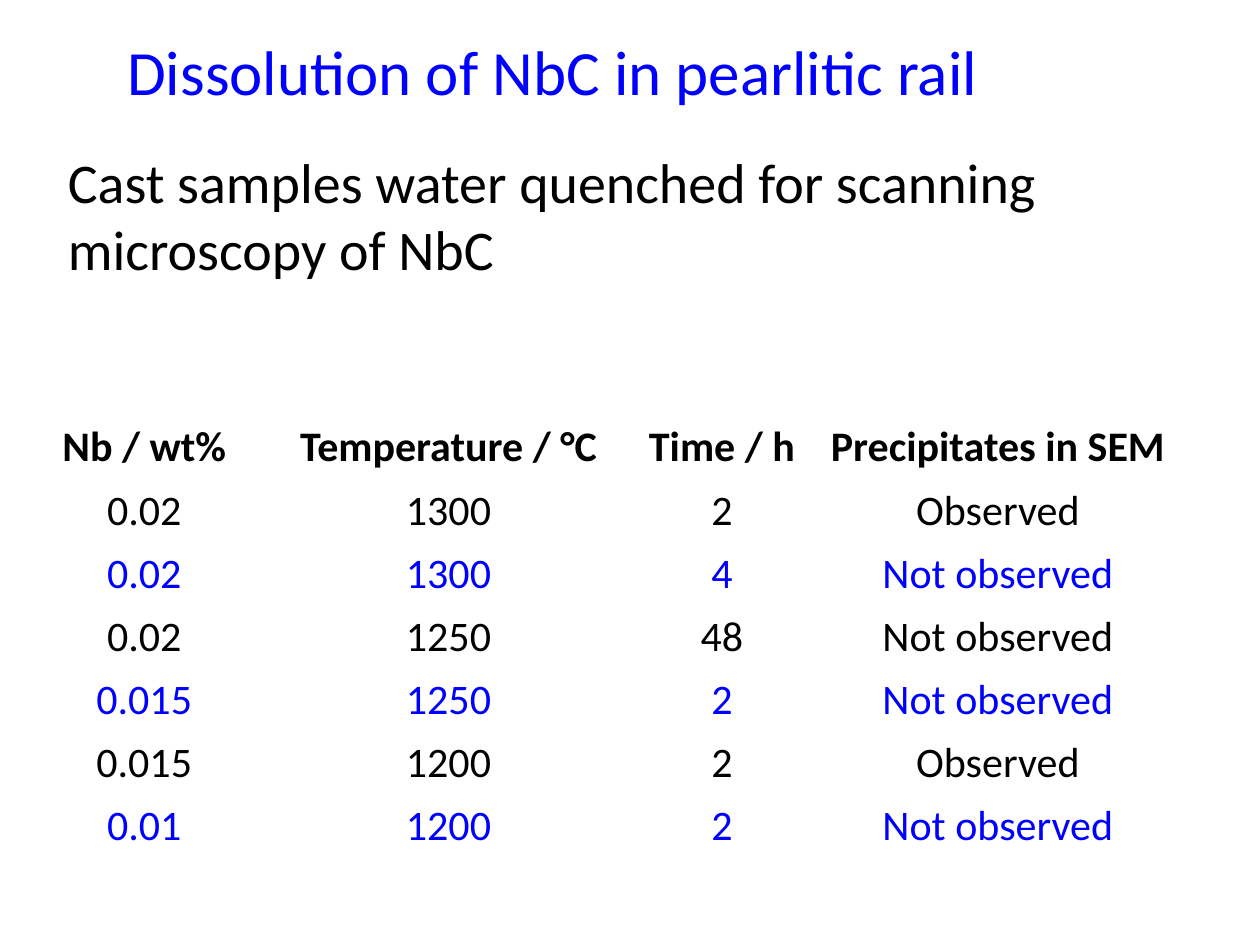
from lxml.etree import SubElement
from pptx import Presentation
from pptx.dml.color import RGBColor
from pptx.enum.shapes import MSO_SHAPE
from pptx.enum.text import MSO_ANCHOR, MSO_AUTO_SIZE, PP_ALIGN
from pptx.oxml.ns import qn
from pptx.util import Inches, Pt

COLORS = {"white": "FFFFFF", "black": "000000", "blue": "0000FF"}


def write(tf, text, size, color, align=PP_ALIGN.LEFT, bold=False):
    p = tf.paragraphs[0]
    p.alignment = align
    r = p.add_run()
    r.text = text
    font_format = {"name": "Calibri", "size": Pt(size), "bold": bold}
    for name, value in font_format.items():
        setattr(r.font, name, value)
    r.font.color.rgb = RGBColor.from_string(COLORS[color])


def add_border(cell, side, points):
    """Draw one white cell border; side is L, R, T or B."""
    ln = SubElement(cell._tc.get_or_add_tcPr(), qn(f"a:ln{side}"), w=str(Pt(points)))
    SubElement(SubElement(ln, qn("a:solidFill")), qn("a:srgbClr"), val=COLORS["white"])


prs = Presentation()
prs.slide_width, prs.slide_height = Inches(10), Inches(7.5)
s = prs.slides.add_slide(prs.slide_layouts[5])

# Title
title = s.shapes.title
title.left, title.top, title.width, title.height = map(Inches, (0.91, 0.21, 7.03, 0.71))
write(title.text_frame, "Dissolution of NbC in pearlitic rail", 36, "blue")

# Description of the samples
sp = s.shapes.add_shape(MSO_SHAPE.RECTANGLE, *map(Inches, (0.44, 1.12, 9.32, 1.51)))
sp.shadow.inherit = False
sp.fill.solid()
sp.fill.fore_color.rgb = RGBColor.from_string(COLORS["white"])
sp.line.fill.background()
write(sp.text_frame, "Cast samples water quenched for scanning microscopy of NbC", 32, "black")

for tf, wrap in ((title.text_frame, False), (sp.text_frame, True)):
    frame_format = {
        "word_wrap": wrap,
        "auto_size": MSO_AUTO_SIZE.SHAPE_TO_FIT_TEXT,
        "vertical_anchor": MSO_ANCHOR.TOP,
    }
    for name, value in frame_format.items():
        setattr(tf, name, value)

# Results table: every second result is blue
rows = [
    ("Nb / wt%", "Temperature / °C", "Time / h", "Precipitates in SEM"),
    ("0.02", "1300", "2", "Observed"),
    ("0.02", "1300", "4", "Not observed"),
    ("0.02", "1250", "48", "Not observed"),
    ("0.015", "1250", "2", "Not observed"),
    ("0.015", "1200", "2", "Observed"),
    ("0.01", "1200", "2", "Not observed"),
]
col_widths = (1.99, 2.84, 1.5, 2.88)
row_height = 0.5
table = s.shapes.add_table(
    len(rows), len(col_widths), Inches(0.15), Inches(3.3),
    Inches(sum(col_widths)), Inches(row_height * len(rows)),
).table
for column, width in zip(table.columns, col_widths):
    column.width = Inches(width)

for i, row in enumerate(rows):
    header = i == 0
    color = "black" if header or i % 2 else "blue"
    for j, text in enumerate(row):
        cell = table.cell(i, j)
        for side in "LRTB":
            thick = (header and side == "B") or (i == 1 and side == "T")
            add_border(cell, side, 3 if thick else 1)
        cell.fill.background()
        write(cell.text_frame, text, 24, color, PP_ALIGN.CENTER, header)

prs.save("out.pptx")
